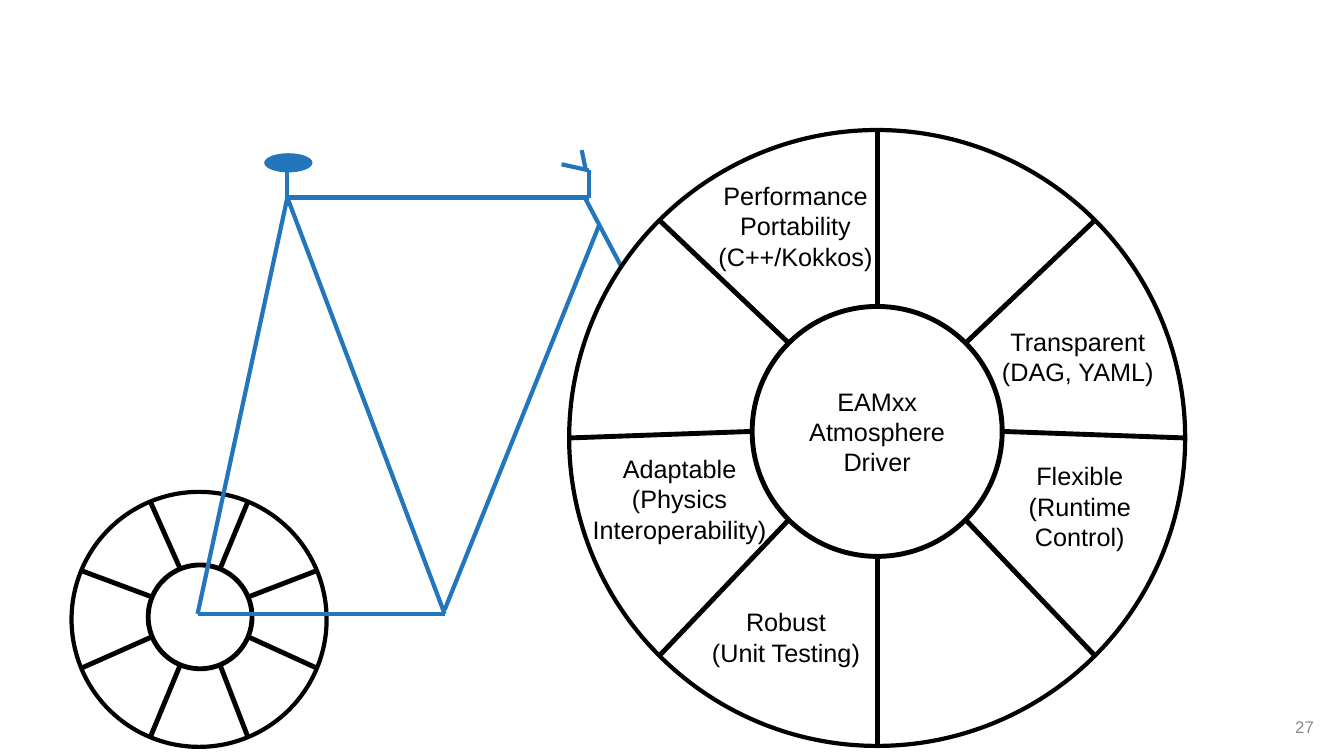
from math import cos, radians, sin

from lxml import etree
from pptx import Presentation
from pptx.dml.color import RGBColor
from pptx.enum.shapes import MSO_CONNECTOR, MSO_SHAPE
from pptx.enum.text import MSO_ANCHOR, PP_ALIGN
from pptx.oxml.ns import qn
from pptx.util import Inches, Pt

STRAIGHT, OVAL = MSO_CONNECTOR.STRAIGHT, MSO_SHAPE.OVAL
TOP, MIDDLE = MSO_ANCHOR.TOP, MSO_ANCHOR.MIDDLE
CENTER, RIGHT = PP_ALIGN.CENTER, PP_ALIGN.RIGHT

COLORS = {name: RGBColor.from_string(value) for name, value in {
    "wheel": "000000", "frame": "2376BC", "text": "000000", "number": "8C8C8C",
}.items()}

# Grid of 1333 columns by 750 rows
CELL = Inches(0.01)

prs = Presentation()
prs.slide_width, prs.slide_height = 1333 * CELL, 750 * CELL
s = prs.slides.add_slide(prs.slide_layouts[6])


def add_text(sp, text, size=18, color="text", align=CENTER, anchor=TOP):
    tf = sp.text_frame
    tf.word_wrap = True
    tf.vertical_anchor = anchor
    tf.text = text
    for p in tf.paragraphs:
        p.alignment = align
        p.font.name, p.font.size = "Arial", Pt(size)
        p.font.color.rgb = COLORS[color]


def add_line(shapes, points, color, width):
    line = shapes.add_connector(STRAIGHT, *(round(v * CELL) for v in points))
    line.line.color.rgb = COLORS[color]
    line.line.width = Pt(width)
    etree.SubElement(line._element.spPr, qn("a:effectLst"))


# Wheels: (centre x, centre y, radius) of hub and rim, first spoke angle
rear = s.shapes.add_group_shape()
frame = s.shapes.add_group_shape()
front = s.shapes.add_group_shape()
wheels = [
    (rear, (198.5, 612, 51.5), (197.5, 614.5, 126.5), 22.5, ""),
    (front, (870, 428, 124), (870, 434.5, 305.5), 0, "EAMxx Atmosphere Driver"),
]
for group, hub, rim, start, title in wheels:
    for (x, y, radius), width, text in ((hub, 3.5, title), (rim, 3, "")):
        sp = group.shapes.add_shape(
            OVAL, *(round(v * CELL) for v in (x - radius, y - radius, 2 * radius, 2 * radius)))
        sp.shadow.inherit = False
        sp.fill.background()
        sp.line.color.rgb = COLORS["wheel"]
        sp.line.width = Pt(width)
        if text:
            add_text(sp, text, anchor=MIDDLE)
    for spoke in range(8):
        a = radians(start + 45 * spoke)
        ends = [v for x, y, radius in (hub, rim)
                for v in (x + radius * cos(a), y + radius * sin(a))]
        add_line(group.shapes, ends, "wheel", 3.5)

# Bicycle frame, seat post and handlebar
axle, crank, seat = (196, 609), (441, 609), (285, 196)
stem, bar = (584, 196), (584, 169)
tubes = [
    (axle, crank), (axle, seat), (seat, crank), (seat, stem),
    ((580, 196), (616, 264)), ((441, 605), (594, 224)),
    ((285, 169), seat), (bar, stem), (bar, (557, 163)), ((577, 149), (581, 169)),
]
for start, end in tubes:
    add_line(frame.shapes, start + end, "frame", 3)

# Saddle
saddle = frame.shapes.add_shape(OVAL, *(v * CELL for v in (262, 152, 48, 19)))
saddle.shadow.inherit = False
saddle.fill.solid()
saddle.fill.fore_color.rgb = COLORS["frame"]
saddle.line.fill.background()

# Labels between the front spokes
labels = [
    ((718, 319, 702, 71), "Transparent\n(DAG, YAML)"),
    ((664, 174, 250, 101), "Performance Portability\n(C++/Kokkos)"),
    ((535, 445, 278, 101), "Adaptable\n(Physics Interoperability)"),
    ((674, 597, 211, 71), "Robust\n(Unit Testing)"),
    ((966, 452, 210, 101), "Flexible\n(Runtime Control)"),
]
for box, text in labels:
    add_text(front.shapes.add_textbox(*(v * CELL for v in box)), text)

# Slide number
number = s.shapes.add_textbox(*(v * CELL for v in (1013, 701, 300, 40)))
add_text(number, "27", size=12, color="number", align=RIGHT, anchor=MIDDLE)

prs.save("out.pptx")
